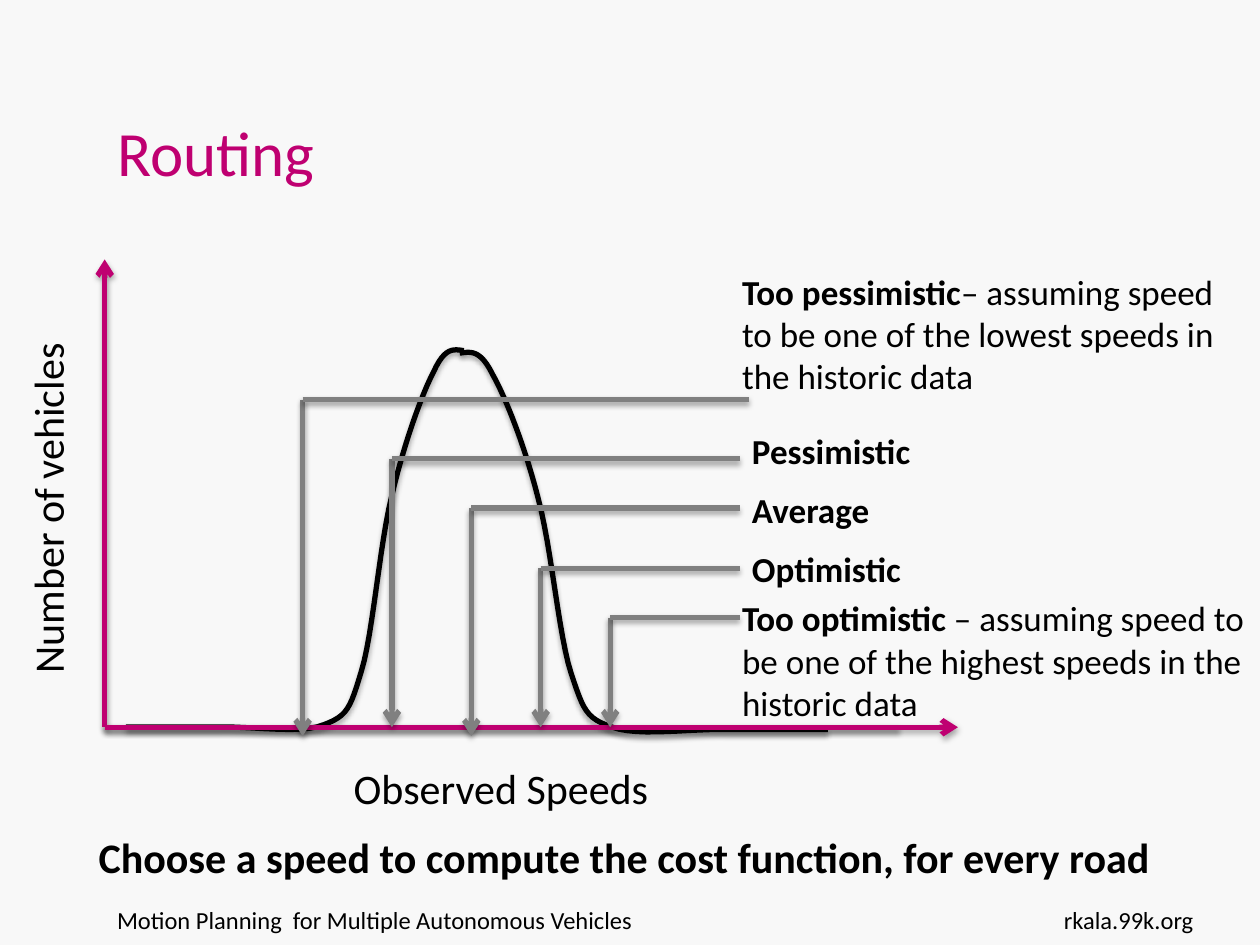
from lxml import etree
from pptx import Presentation
from pptx.dml.color import RGBColor
from pptx.enum import shapes, text
from pptx.oxml import ns
from pptx.util import Cm, Pt

PINK = RGBColor(0xBF, 0x00, 0x71)
BLACK = RGBColor(0, 0, 0)
GREY = RGBColor(0x80, 0x80, 0x80)
PAPER = RGBColor(0xF8, 0xF8, 0xF8)
LEFT, MID, RIGHT = text.PP_ALIGN.LEFT, text.PP_ALIGN.CENTER, text.PP_ALIGN.RIGHT

# Rising half of the bell: start, then Bezier triples (cm right of and above the origin)
START = (2.26, 0)
BENDS = [
    ((2.92, 0.03), (3.94, -0.15), (4.42, 0.05)),
    ((4.9, 0.23), (4.95, 0.38), (5.18, 1.14)),
    ((5.41, 1.9), (5.54, 3.66), (5.79, 4.67)),
    ((6.02, 5.66), (6.38, 6.68), (6.63, 7.16)),
    ((6.86, 7.67), (7.04, 7.62), (7.24, 7.59)),
]
# Markers: x, height, right end, foot
MARKS = [
    (3.99, 6.6, 12.98, -0.18),
    (5.79, 5.41, 12.8, 0),
    (7.39, 4.42, 12.8, -0.18),
    (8.79, 3.2, 12.8, 0),
    (10.19, 2.21, 12.8, 0),
]
# Labels: x, y, width, height, bold part, plain part
LABELS = [
    (0, 0, 10.69, 2.82, "Too pessimistic",
     "– assuming speed to be one of the lowest speeds in the historic data"),
    (0.2, 3.2, 4.6, 1.12, "Pessimistic", ""),
    (0.2, 4.39, 4.6, 1.12, "Average", ""),
    (0.2, 5.59, 4.6, 1.12, "Optimistic", ""),
    (0, 6.58, 10.69, 2.82, "Too optimistic ",
     "– assuming speed to be one of the highest speeds in the historic data"),
]


def style(run, size, color=BLACK, bold=False):
    for key, val in dict(name="Calibri", size=Pt(size), bold=bold).items():
        setattr(run.font, key, val)
    run.font.color.rgb = color


def write(slide, box, parts, size, align=LEFT, turn=0):
    """Add a text box; parts are (words, bold) pairs."""
    area = slide.shapes.add_textbox(*map(Cm, box))
    area.rotation = turn
    area.text_frame.word_wrap = True
    para = area.text_frame.paragraphs[0]
    para.alignment = align
    for words, bold in parts:
        run = para.add_run()
        run.text = words
        style(run, size, bold=bold)


def ink(shape, color):
    """Set the outline and a soft shadow below it."""
    shape.line.color.rgb = color
    shape.line.width = Pt(3)
    props = shape._element.spPr
    glow = etree.SubElement(props, ns.qn("a:effectLst"))
    drop = etree.SubElement(glow, ns.qn("a:outerShdw"), blurRad=str(Pt(3.1)),
                            dist=str(Pt(1.8)), dir="5400000", rotWithShape="0")
    tint = etree.SubElement(drop, ns.qn("a:srgbClr"), val="000000")
    etree.SubElement(tint, ns.qn("a:alpha"), val="35000")


def rule(slide, start, end, color, arrow=False):
    line = slide.shapes.add_connector(
        shapes.MSO_CONNECTOR.STRAIGHT, *map(Cm, start + end))
    ink(line, color)
    if arrow:
        etree.SubElement(line.line._get_or_add_ln(), ns.qn("a:tailEnd"), type="arrow")


def trace(steps=12):
    """Return points along the rising half of the bell."""
    points, last = [(0.43, 0), START], START
    for a, b, c in BENDS:
        for i in range(1, steps + 1):
            t = i / steps
            s = 1 - t
            points.append(tuple(
                s**3 * p + 3 * s * s * t * q + 3 * s * t * t * r + t**3 * e
                for p, q, r, e in zip(last, a, b, c)))
        last = c
    return points


def curve(slide, points):
    dots = [(Cm(x), Cm(y)) for x, y in points]
    path = slide.shapes.build_freeform(*dots[0])
    path.add_line_segments(dots[1:], close=False)
    shape = path.convert_to_shape()
    shape.fill.background()
    ink(shape, BLACK)


def head(slide, box):
    title = slide.shapes.title
    title.left, title.top, title.width, title.height = map(Cm, box)
    frame = title.text_frame
    frame.text = "Routing"
    for key, val in dict(vertical_anchor=text.MSO_ANCHOR.BOTTOM, word_wrap=False,
                         auto_size=text.MSO_AUTO_SIZE.NONE).items():
        setattr(frame, key, val)
    frame.paragraphs[0].alignment = LEFT
    style(frame.paragraphs[0].runs[0], 36, PINK)


def plot(slide, box):
    left, top, width, height = box
    base = top + height

    def at(x, y):
        return left + x, base - y

    # Bell curve: the falling half mirrors the rising one, slightly wider
    rule(slide, at(0, 0), at(16, 0), BLACK)
    rise = trace()
    curve(slide, [at(x, y) for x, y in rise])
    curve(slide, [at(14.58 - (x - 0.43) * 1.09, y - 0.05) for x, y in rise])
    # Axes
    for end in (at(0, height), at(width, 0)):
        rule(slide, at(0, 0), end, PINK, arrow=True)
    write(slide, (left - 5.26, top + 3.86, 8.2, 1.27),
          [("Number of vehicles", False)], 24, turn=270)
    write(slide, (left + 0.79, base + 0.58, 14.4, 1.27),
          [("Observed Speeds", False)], 24, MID)
    # Speed markers
    for x, y, end, foot in MARKS:
        rule(slide, at(x, y), at(x, foot), GREY, arrow=True)
        rule(slide, at(x, y), at(end, y), GREY)


def notes(slide, box):
    for x, y, wide, high, bold, plain in LABELS:
        parts = [(bold, True)] + ([(plain, False)] if plain else [])
        write(slide, (box[0] + x, box[1] + y, wide, high), parts, 20)


def foot(slide, box):
    left, top, width, height = box
    write(slide, (left, top, 17.6, height),
          [("Motion Planning  for Multiple Autonomous Vehicles", False)], 14)
    write(slide, (left + width - 3.81, top, 3.81, height),
          [("rkala.99k.org", False)], 14, RIGHT)


def main():
    deck = Presentation()
    deck.slide_width, deck.slide_height = Cm(25.4), Cm(19.05)
    slide = deck.slides.add_slide(deck.slide_layouts[5])
    slide.background.fill.solid()
    slide.background.fill.fore_color.rgb = PAPER
    head(slide, (2.11, 0.76, 17.2, 3.18))
    plot(slide, (2.11, 5.23, 17.2, 9.43))
    notes(slide, (14.71, 5.33, 10.69, 9.4))
    # Conclusion
    write(slide, (0.89, 16.64, 23.39, 1.27),
          [("Choose a speed to compute the cost function, for every road", True)], 24, MID)
    foot(slide, (2.11, 18.11, 22.2, 1.32))
    deck.save("out.pptx")


if __name__ == "__main__":
    main()
